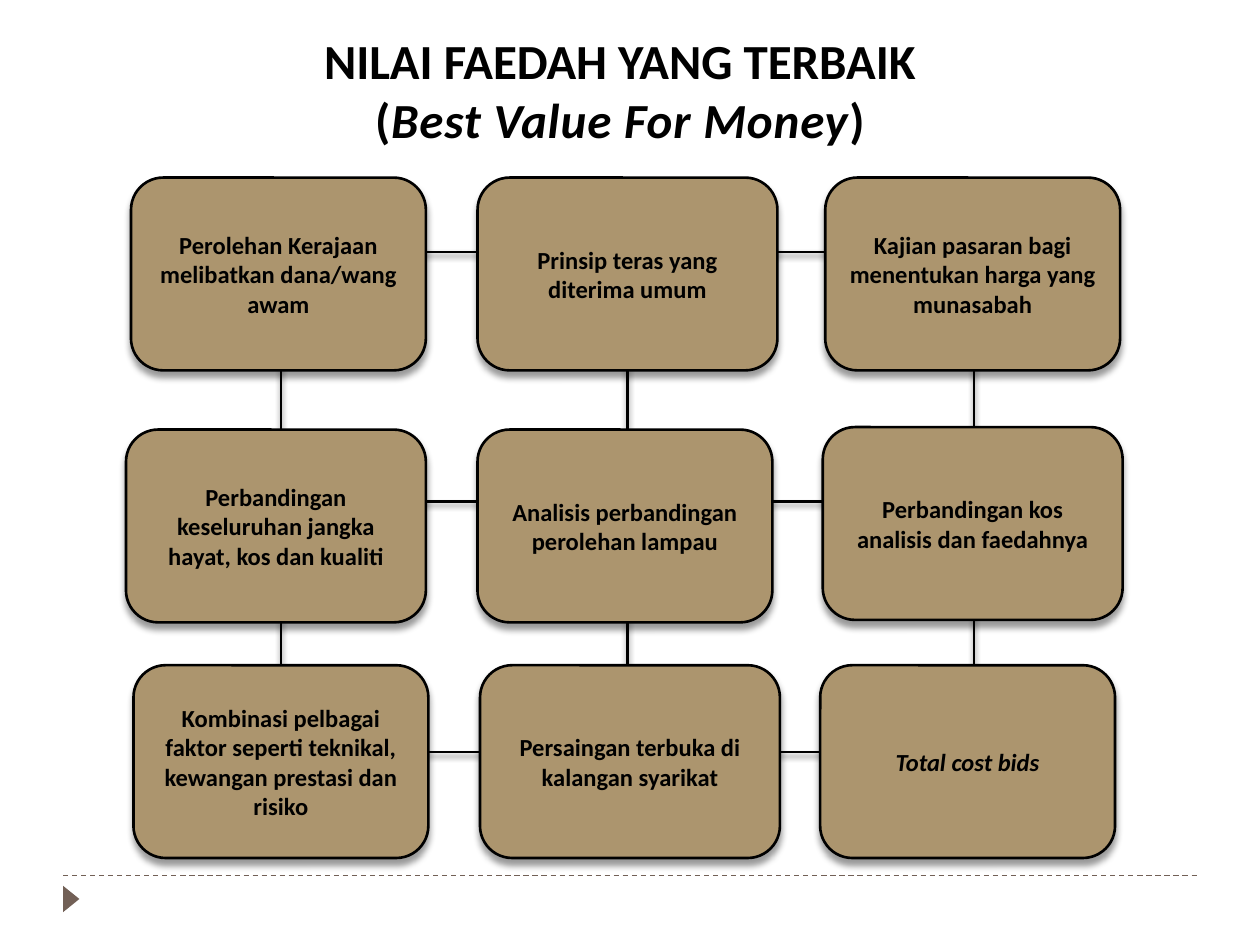
from dataclasses import dataclass

from lxml import etree
from pptx import Presentation, util as u
from pptx.dml.color import RGBColor
from pptx.enum import dml, shapes, text
from pptx.oxml import ns

Inches, Pt = u.Inches, u.Pt


@dataclass(frozen=True)
class Theme:
    font: str = "Calibri"
    black: RGBColor = RGBColor(0, 0, 0)
    tan: RGBColor = RGBColor(0xAC, 0x95, 0x6E)
    brown: RGBColor = RGBColor(0x72, 0x60, 0x56)
    title_size: int = 28
    box_size: int = 14
    outline: float = 1.5
    rule: float = 0.75


THEME = Theme()

# Each box: left, top, width, text, italic
BOX_HEIGHT = 1.53
BOXES = [
    (1.04, 1.41, 2.34, "Perolehan Kerajaan melibatkan dana/wang awam", False),
    (3.79, 1.41, 2.38, "Prinsip teras yang diterima umum", False),
    (6.55, 1.41, 2.34, "Kajian pasaran bagi menentukan harga yang munasabah", False),
    (1.00, 3.41, 2.38, "Perbandingan keseluruhan jangka hayat, kos dan kualiti", False),
    (3.79, 3.41, 2.34, "Analisis perbandingan perolehan lampau", False),
    (6.53, 3.39, 2.38, "Perbandingan kos analisis dan faedahnya", False),
    (1.06, 5.28, 2.34, "Kombinasi pelbagai faktor seperti teknikal, "
                       "kewangan prestasi dan risiko", False),
    (3.81, 5.28, 2.38, "Persaingan terbuka di kalangan syarikat", False),
    (6.51, 5.28, 2.34, "Total cost bids", True),
]
# Links run behind the boxes: x, bottom, top and y, left, right
LINK_LENGTH_V, LINK_LENGTH_H = 2.73, 3.83
COLUMN_LINKS = [(7.73, 2.56), (4.98, 2.66), (2.23, 2.63)]
ROW_LINKS = [(3.07, 5.97), (3.07, 3.98), (3.08, 2.0)]


def set_values(target, values):
    for name, value in values.items():
        setattr(target, name, value)


def add_effects(shape, blur=None, distance=None):
    """Give a shape a soft downward shadow, or none without a blur."""
    effects = etree.SubElement(shape._element.spPr, ns.qn("a:effectLst"))
    if blur is None:
        return
    shadow = etree.SubElement(effects, ns.qn("a:outerShdw"), blurRad=str(Pt(blur)),
                              dist=str(Pt(distance)), dir="5400000",
                              algn="ctr", rotWithShape="0")
    color = etree.SubElement(shadow, ns.qn("a:srgbClr"), val="000000")
    etree.SubElement(color, ns.qn("a:alpha"), val="40000")


def add_line(slide, start, end, color, width):
    line = slide.shapes.add_connector(shapes.MSO_CONNECTOR.STRAIGHT,
                                      *map(Inches, start + end))
    line.line.color.rgb = color
    line.line.width = Pt(width)
    return line


def add_run(paragraph, content, size, italic=False):
    run = paragraph.add_run()
    run.text = content
    set_values(run.font, {"name": THEME.font, "size": Pt(size),
                          "bold": True, "italic": italic})
    run.font.color.rgb = THEME.black
    return run


def add_rounded(slide, box):
    shape = slide.shapes.add_shape(shapes.MSO_SHAPE.ROUNDED_RECTANGLE,
                                   *map(Inches, box))
    set_values(shape.text_frame, {"word_wrap": True,
                                  "vertical_anchor": text.MSO_ANCHOR.MIDDLE})
    shape.text_frame.paragraphs[0].alignment = text.PP_ALIGN.CENTER
    return shape


def add_footer(slide, box):
    left, top, width, _ = box
    rule = add_line(slide, (left, top), (left + width, top), THEME.brown, THEME.rule)
    rule.line.dash_style = dml.MSO_LINE.DASH
    add_effects(rule)
    marker = slide.shapes.add_shape(
        shapes.MSO_SHAPE.ISOSCELES_TRIANGLE,
        *map(Inches, (left - 0.04, top + 0.12, 0.21, 0.13)))
    marker.rotation = 90
    marker.shadow.inherit = False
    marker.fill.solid()
    marker.fill.fore_color.rgb = THEME.brown
    marker.line.fill.background()


def add_links(slide):
    ends = [((x, top + LINK_LENGTH_V), (x, top)) for x, top in COLUMN_LINKS]
    ends += [((left, y), (left + LINK_LENGTH_H, y)) for left, y in ROW_LINKS]
    for start, end in ends:
        link = add_line(slide, start, end, THEME.black, THEME.outline)
        add_effects(link, blur=3, distance=2)


def add_box(slide, box, content, italic):
    shape = add_rounded(slide, box)
    shape.fill.solid()
    shape.fill.fore_color.rgb = THEME.tan
    shape.line.color.rgb = THEME.black
    shape.line.width = Pt(THEME.outline)
    add_effects(shape, blur=4, distance=3.4)
    add_run(shape.text_frame.paragraphs[0], content, THEME.box_size, italic)


def add_title(slide, box):
    shape = add_rounded(slide, box)
    shape.shadow.inherit = False
    shape.fill.background()
    shape.line.fill.background()
    first = shape.text_frame.paragraphs[0]
    add_run(first, "NILAI FAEDAH YANG TERBAIK", THEME.title_size)
    second = shape.text_frame.add_paragraph()
    second.alignment = text.PP_ALIGN.CENTER
    for content, italic in (("(", False), ("Best Value For Money", True), (")", False)):
        run = add_run(second, content, THEME.title_size, italic)
        run.font._element.set("spc", "50")  # letter spacing of half a point


def main():
    presentation = Presentation()
    set_values(presentation, {"slide_width": Inches(10), "slide_height": Inches(7.5)})
    slide = presentation.slides.add_slide(presentation.slide_layouts[6])

    add_footer(slide, (0.5, 6.95, 9, 0.4))
    add_links(slide)
    for left, top, width, content, italic in BOXES:
        add_box(slide, (left, top, width, BOX_HEIGHT), content, italic)
    add_title(slide, (0.42, 0.17, 9, 1.08))

    presentation.save("out.pptx")


if __name__ == "__main__":
    main()
